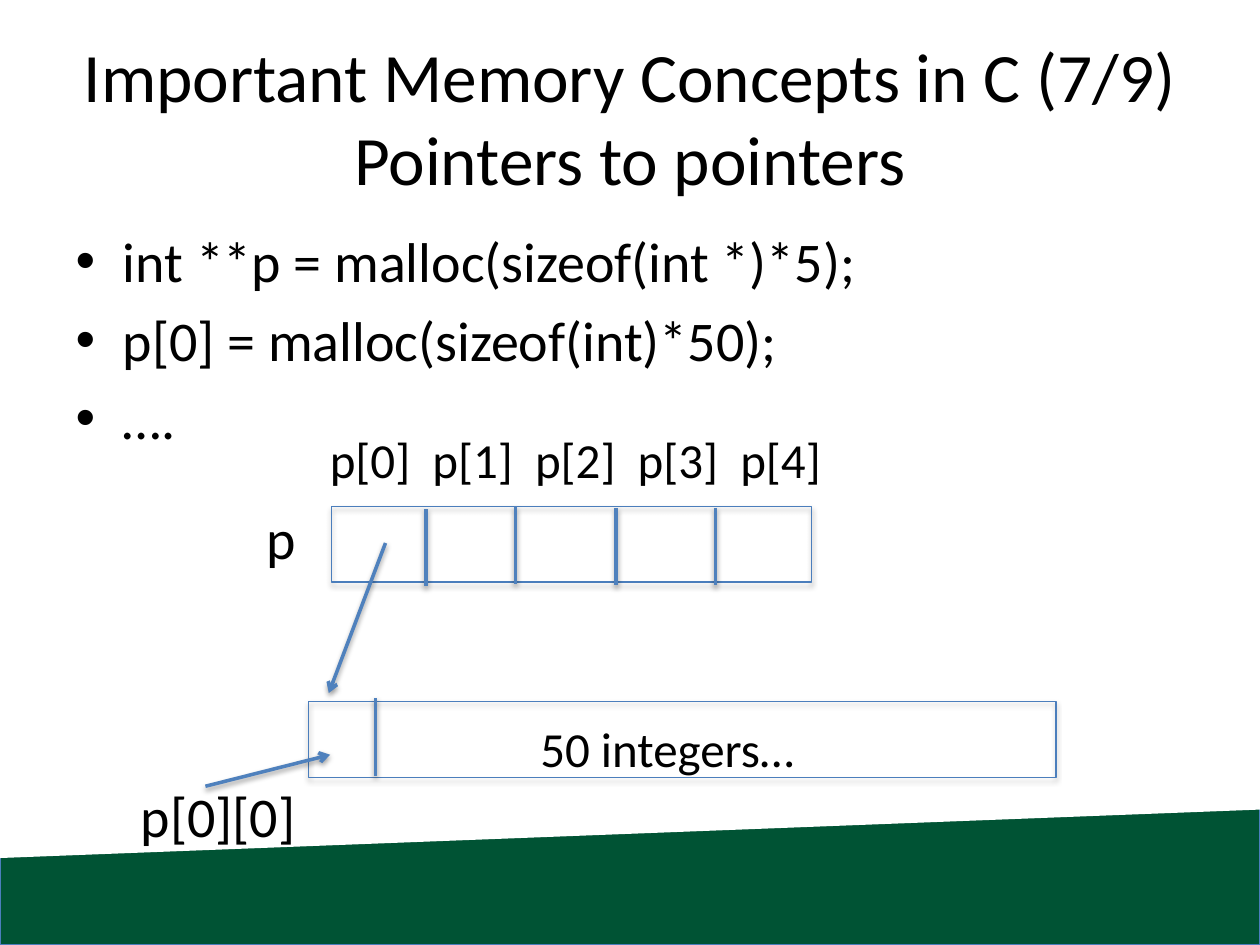
"""Build the slide on pointers to pointers in C."""
from dataclasses import dataclass
from typing import Any

from lxml.etree import SubElement
from pptx import Presentation
from pptx.dml.color import RGBColor
from pptx.enum.shapes import MSO_CONNECTOR, MSO_SHAPE
from pptx.enum.text import MSO_ANCHOR, MSO_AUTO_SIZE, PP_ALIGN
from pptx.oxml.ns import qn
from pptx.util import Pt

BLACK = RGBColor(0x00, 0x00, 0x00)
WHITE = RGBColor(0xFF, 0xFF, 0xFF)
GREEN = RGBColor(0x00, 0x53, 0x34)
EDGE = RGBColor(0x4B, 0x7E, 0xBC)
BLUE = RGBColor(0x4F, 0x81, 0xBD)


@dataclass
class Box:
    left: float
    top: float
    width: float
    height: float

    def place(self) -> list:
        return [Pt(n) for n in (self.left, self.top, self.width, self.height)]


@dataclass
class Label:
    box: Box
    text: str
    size: float
    wrap: bool = True


@dataclass
class Stroke:
    x1: float
    y1: float
    x2: float
    y2: float
    arrow: bool = False


ROW = Box(189.4, 289.4, 274.3, 43.2)
BLOCK = Box(176.4, 401, 427, 43.2)
LABELS = [
    Label(Box(145.4, 284.4, 42.5, 46), "p", 32),
    Label(Box(181.4, 241.9, 311.8, 41.2),
          "  ".join(f"p[{n}]" for n in range(5)), 28),
    Label(Box(301.7, 406.8, 162, 41.2), "50 integers…", 28, False),
    Label(Box(73.4, 442.8, 129.6, 46), "p[0][0]", 32),
]
STROKES = [
    *(Stroke(x, y, x, y + 44.2) for x, y in (
        (243.4, 290.9), (294.5, 289.4), (352.1, 290.2), (409, 290.2),
        (214.6, 399))),
    Stroke(220.3, 310.3, 187.9, 396, True),
    Stroke(117.4, 449.3, 188.6, 431.3, True),
]
BULLETS = ["int **p = malloc(sizeof(int *)*5);",
           "p[0] = malloc(sizeof(int)*50);", "…."]


def shade(shape: Any, alpha: int, dist: float) -> None:
    list_ = SubElement(shape._element.spPr, qn("a:effectLst"))
    outer = SubElement(list_, qn("a:outerShdw"), blurRad=str(Pt(3.1)),
                       dist=str(Pt(dist)), dir="5400000", rotWithShape="0")
    tint = SubElement(outer, qn("a:srgbClr"), val=str(BLACK))
    SubElement(tint, qn("a:alpha"), val=str(alpha * 1000))


def style(frame: Any, size: float) -> None:
    form = {"name": "Calibri", "size": Pt(size)}
    for para in frame.paragraphs:
        for run in para.runs:
            for key, value in form.items():
                setattr(run.font, key, value)
            run.font.color.rgb = BLACK


def draw_box(slide: Any, box: Box, fill: RGBColor | None = None) -> None:
    shape = slide.shapes.add_shape(MSO_SHAPE.RECTANGLE, *box.place())
    if fill is None:
        shape.fill.background()
    else:
        shape.fill.solid()
        shape.fill.fore_color.rgb = fill
    shape.line.color.rgb = EDGE
    shape.line.width = Pt(0.75)
    shade(shape, 35, 1.8)


def draw_slope(slide: Any, box: Box) -> None:
    shape = slide.shapes.add_shape(MSO_SHAPE.PARALLELOGRAM, *box.place())
    shape.adjustments[0] = 0.166
    shape.rotation = 90
    shape._element.spPr.xfrm.set("flipH", "1")
    shape.fill.solid()
    shape.fill.fore_color.rgb = WHITE
    shape.line.fill.background()
    shape.shadow.inherit = False


def draw_stroke(slide: Any, mark: Stroke) -> None:
    ends = [Pt(n) for n in (mark.x1, mark.y1, mark.x2, mark.y2)]
    line = slide.shapes.add_connector(MSO_CONNECTOR.STRAIGHT, *ends)
    line.line.color.rgb = BLUE
    line.line.width = Pt(2)
    if mark.arrow:
        SubElement(line.line._get_or_add_ln(), qn("a:tailEnd"), type="arrow")
    shade(line, 38, 1.6)


def draw_label(slide: Any, label: Label) -> None:
    frame = slide.shapes.add_textbox(*label.box.place()).text_frame
    frame.word_wrap = label.wrap
    frame.auto_size = MSO_AUTO_SIZE.SHAPE_TO_FIT_TEXT
    frame.text = label.text
    style(frame, label.size)


def fill_holder(holder: Any, box: Box, text: str, size: float) -> None:
    for key, value in zip(("left", "top", "width", "height"), box.place()):
        setattr(holder, key, value)
    holder.text_frame.text = text
    holder.text_frame.auto_size = MSO_AUTO_SIZE.NONE
    style(holder.text_frame, size)
    holder._element.getparent().append(holder._element)


def main() -> None:
    deck = Presentation()
    deck.slide_width, deck.slide_height = Pt(720), Pt(540)
    slide = deck.slides.add_slide(deck.slide_layouts[1])
    title, body = slide.shapes.title, slide.placeholders[1]
    draw_box(slide, Box(0, 404, 720, 136), GREEN)
    draw_slope(slide, Box(276.5, 46.8, 167, 720))
    fill_holder(title, Box(36, 21.6, 648, 90),
                "Important Memory Concepts in C (7/9)\vPointers to pointers", 39.6)
    title.text_frame.vertical_anchor = MSO_ANCHOR.MIDDLE
    title.text_frame.paragraphs[0].alignment = PP_ALIGN.CENTER
    fill_holder(body, Box(36, 126, 648, 356.4), "\n".join(BULLETS), 32)
    body.text_frame.paragraphs[0].space_before = Pt(0)
    for box in (ROW, BLOCK):
        draw_box(slide, box)
    for mark in STROKES:
        draw_stroke(slide, mark)
    for label in LABELS:
        draw_label(slide, label)
    deck.save("out.pptx")


if __name__ == "__main__":
    main()
